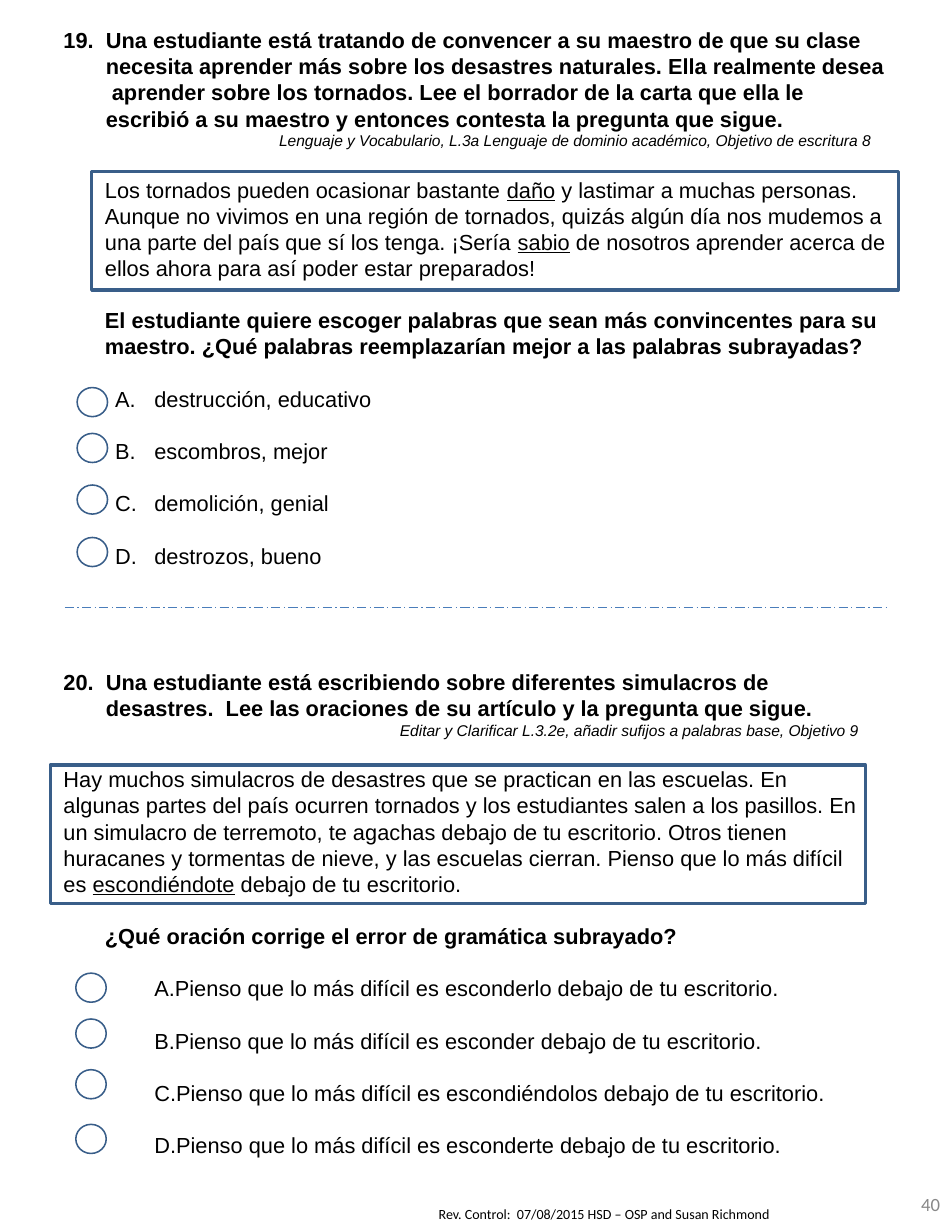
"""Build a reading-test page with two multiple-choice questions."""
from lxml.etree import SubElement
from pptx import Presentation
from pptx.dml.color import RGBColor
from pptx.enum.dml import MSO_LINE
from pptx.enum.shapes import MSO_CONNECTOR, MSO_SHAPE
from pptx.enum.text import MSO_ANCHOR, PP_ALIGN
from pptx.oxml.ns import qn
from pptx.util import Cm, Pt

BLACK = RGBColor(0x00, 0x00, 0x00)
GRAY = RGBColor(0x88, 0x88, 0x88)
WHITE = RGBColor(0xFF, 0xFF, 0xFF)
OUTLINE = RGBColor(0x39, 0x5E, 0x89)
DIVIDER = RGBColor(0x4A, 0x7D, 0xBA)


def add_text_frame(slide, left, top, width, height):
    frame = slide.shapes.add_textbox(Cm(left), Cm(top), Cm(width), Cm(height)).text_frame
    frame.word_wrap = True
    frame.margin_left, frame.margin_right = Cm(0.27), Cm(0.24)
    frame.margin_top = frame.margin_bottom = Cm(0.13)
    return frame


def write(frame, text, size=14, font="Arial", color=BLACK, bold=False, italic=False,
          margin=0, indent=0, before=0, lettered=False, align=PP_ALIGN.LEFT):
    """Append a paragraph; words between underscores are underlined."""
    first = frame.paragraphs[0]
    paragraph = frame.add_paragraph() if first.runs else first
    paragraph.alignment = align
    paragraph.line_spacing = Pt(1.2 * size)
    paragraph.space_before = Pt(before)
    properties = paragraph._p.get_or_add_pPr()
    properties.set("marL", str(Cm(margin)))
    properties.set("indent", str(Cm(indent)))
    if lettered:
        SubElement(properties, qn("a:buAutoNum"), type="alphaUcPeriod")
    for index, part in enumerate(text.split("_")):
        run = paragraph.add_run()
        run.text = part
        run.font.size = Pt(size)
        run.font.name = font
        run.font.color.rgb = color
        run.font.bold = bold
        run.font.italic = italic
        if index % 2:
            run.font.underline = True


GAP = 16.8
QUESTIONS = [
    {
        "frame": (1.17, 0.48, 19.2, 12.67),
        "prompt": "19.\tUna estudiante está tratando de convencer a su maestro de que su clase "
                  "necesita aprender más sobre los desastres naturales. Ella realmente desea  "
                  "aprender sobre los tornados. Lee el borrador de la carta que ella le "
                  "escribió a su maestro y entonces contesta la pregunta que sigue.",
        "standard": "Lenguaje y Vocabulario, L.3a Lenguaje de dominio académico, "
                    "Objetivo de escritura 8",
        "standard_margin": 4.89,
        "passage": "Los tornados pueden ocasionar bastante _daño_ y lastimar a muchas personas. "
                   "Aunque no vivimos en una región de tornados, quizás algún día nos mudemos a "
                   "una parte del país que sí los tenga. ¡Sería _sabio_ de nosotros aprender "
                   "acerca de ellos ahora para así poder estar preparados!",
        "passage_margin": 0.94,
        "question": "El estudiante quiere escoger palabras que sean más convincentes para su "
                    "maestro. ¿Qué palabras reemplazarían mejor a las palabras subrayadas?",
        "options": ["destrucción, educativo", "escombros, mejor",
                    "demolición, genial", "destrozos, bueno"],
        "option_margin": 2.06,
        "option_indent": -0.89,
        "passage_box": (2.08, 3.89, 18.29, 2.69),
        "bubble_left": 1.75,
        "bubble_tops": [8.79, 9.83, 11, 12.19],
    },
    {
        "frame": (1.17, 15.04, 18.69, 11.48),
        "prompt": "20.\tUna estudiante está escribiendo sobre diferentes simulacros de "
                  "desastres.  Lee las oraciones de su artículo y la pregunta que sigue.",
        "standard": "Editar y Clarificar L.3.2e, añadir sufijos a palabras base, Objetivo 9",
        "standard_margin": 7.63,
        "passage": "Hay muchos simulacros de desastres que se practican en las escuelas. En "
                   "algunas partes del país ocurren tornados y los estudiantes salen a los "
                   "pasillos. En un simulacro de terremoto, te agachas debajo de tu escritorio. "
                   "Otros tienen huracanes y tormentas de nieve, y las escuelas cierran. Pienso "
                   "que lo más difícil es _escondiéndote_ debajo de tu escritorio.",
        "passage_margin": 0,
        "question": "¿Qué oración corrige el error de gramática subrayado?",
        "options": [f"Pienso que lo más difícil es {verb} debajo de tu escritorio."
                    for verb in ("esconderlo", "esconder", "escondiéndolos", "esconderte")],
        "option_margin": 1.12,
        "option_indent": 0.94,
        "passage_box": (1.14, 17.35, 18.49, 3.15),
        "bubble_left": 1.72,
        "bubble_tops": [22.07, 23.11, 24.26, 25.5],
    },
]

presentation = Presentation()
presentation.slide_width, presentation.slide_height = Cm(21.59), Cm(27.94)
slide = presentation.slides.add_slide(presentation.slide_layouts[6])

footer = add_text_frame(slide, 9.68, 27.2, 10.8, 0.66)
write(footer, "Rev. Control:  07/08/2015 HSD – OSP and Susan Richmond", size=9, font="Calibri")

for item in QUESTIONS:
    frame = add_text_frame(slide, *item["frame"])
    write(frame, item["prompt"], bold=True, margin=0.96, indent=-0.96)
    write(frame, item["standard"], size=10, italic=True, margin=item["standard_margin"])
    write(frame, item["passage"], margin=item["passage_margin"], before=GAP)
    write(frame, item["question"], bold=True, margin=0.94, before=GAP)
    for option in item["options"]:
        write(frame, option, margin=item["option_margin"], indent=item["option_indent"],
              before=GAP, lettered=True)

    passage_box = slide.shapes.add_shape(
        MSO_SHAPE.RECTANGLE, *[Cm(length) for length in item["passage_box"]])
    passage_box.shadow.inherit = False
    passage_box.fill.background()
    passage_box.line.color.rgb = OUTLINE
    passage_box.line.width = Pt(2)

    for top in item["bubble_tops"]:
        bubble = slide.shapes.add_shape(
            MSO_SHAPE.OVAL, Cm(item["bubble_left"]), Cm(top), Cm(0.69), Cm(0.66))
        bubble.shadow.inherit = False
        bubble.fill.solid()
        bubble.fill.fore_color.rgb = WHITE
        bubble.line.color.rgb = OUTLINE
        bubble.line.width = Pt(1)

divider = slide.shapes.add_connector(
    MSO_CONNECTOR.STRAIGHT, Cm(1.47), Cm(13.77), Cm(20.14), Cm(13.77))
divider.line.color.rgb = DIVIDER
divider.line.width = Pt(0.75)
divider.line.dash_style = MSO_LINE.LONG_DASH_DOT
SubElement(divider._element.spPr, qn("a:effectLst"))

page_number = add_text_frame(slide, 19.25, 26.67, 2.34, 1.27)
page_number.vertical_anchor = MSO_ANCHOR.MIDDLE
page_number.margin_right = Cm(0.27)
write(page_number, "40", size=12, font="Calibri", color=GRAY, align=PP_ALIGN.RIGHT)

presentation.save("out.pptx")
